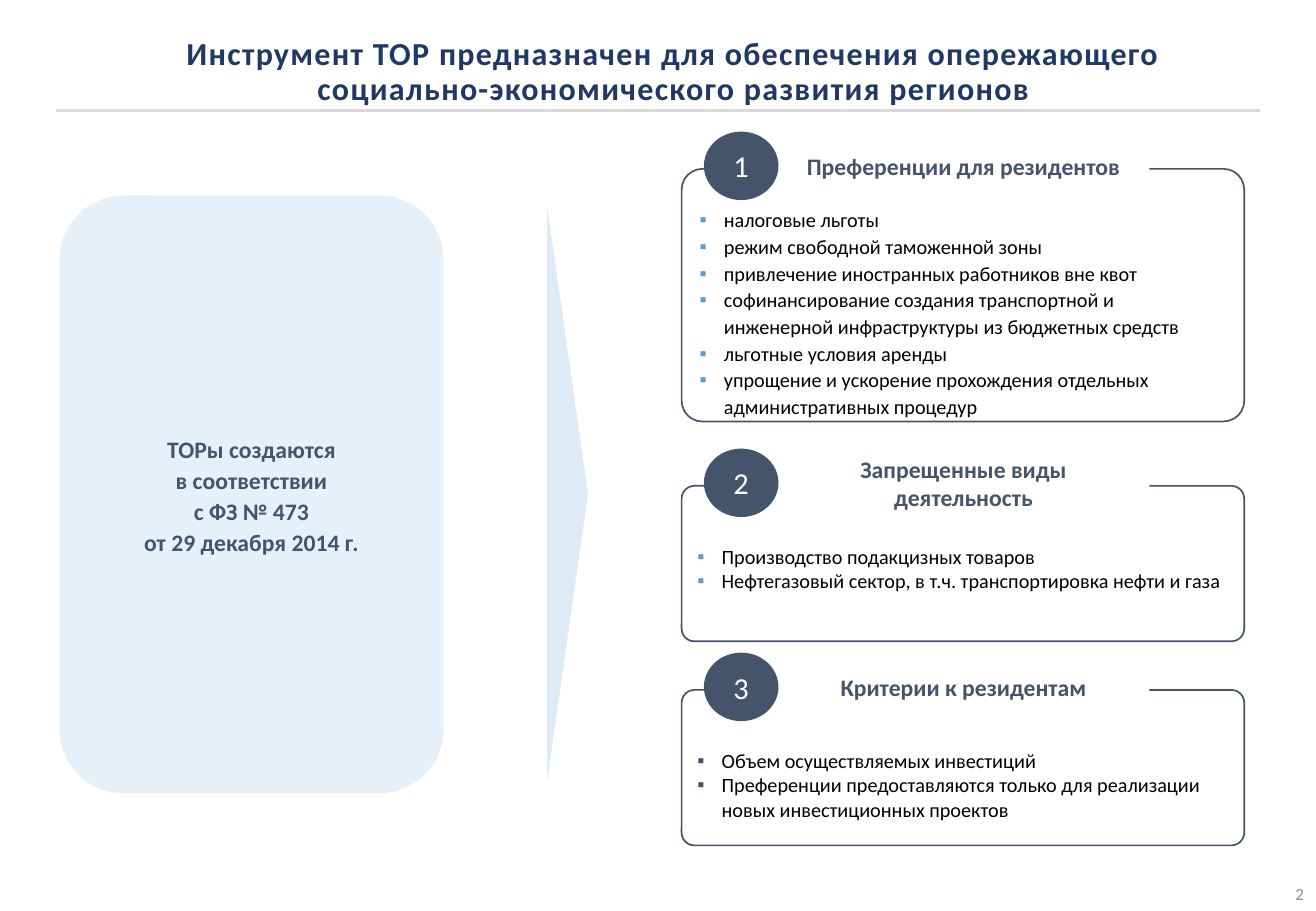
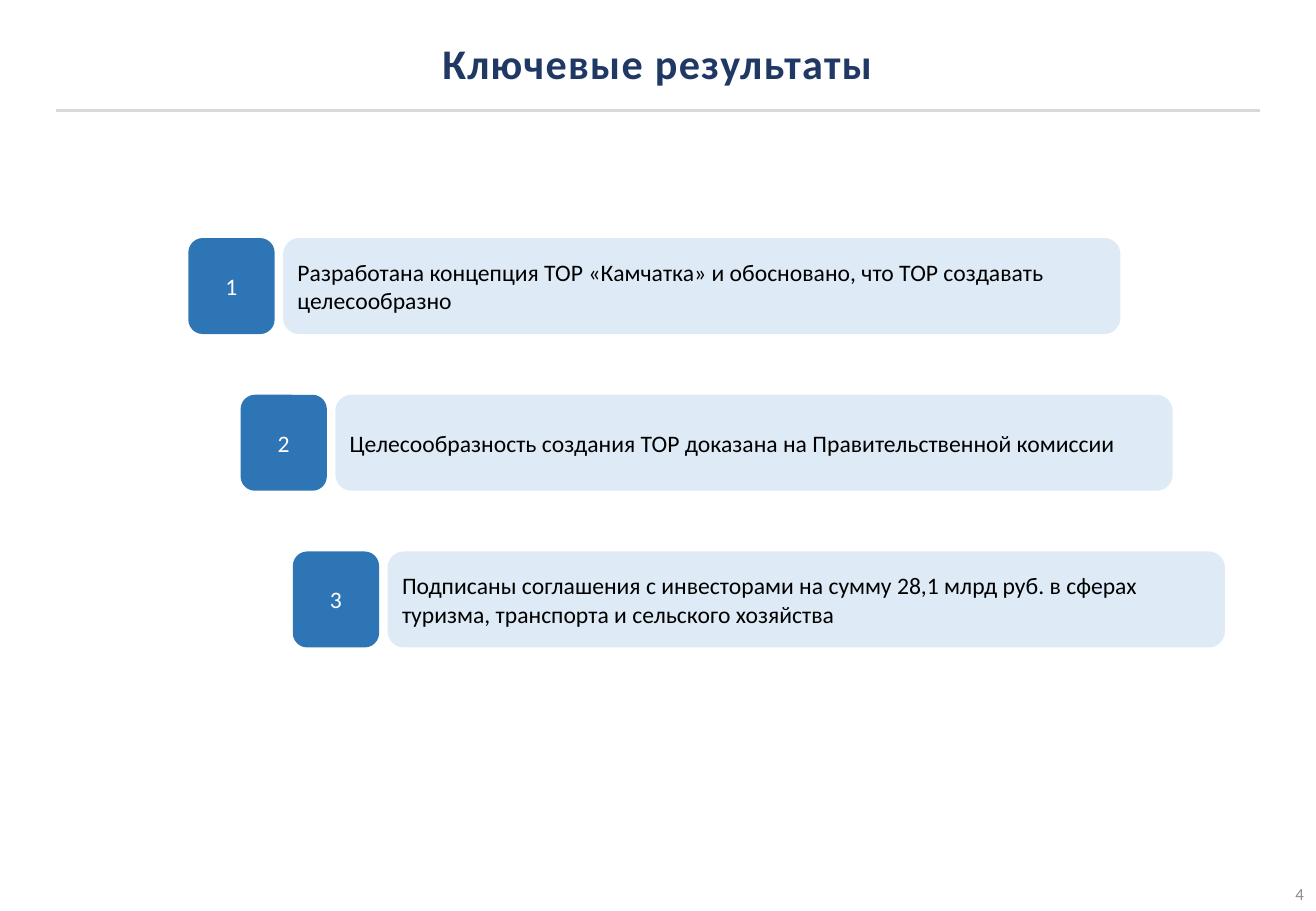
from dataclasses import dataclass
from lxml.etree import SubElement
from pptx import Presentation
from pptx.dml.color import RGBColor
from pptx.enum.shapes import MSO_CONNECTOR, MSO_SHAPE
from pptx.enum.text import MSO_ANCHOR, MSO_AUTO_SIZE, PP_ALIGN
from pptx.oxml.ns import qn
from pptx.util import Inches, Pt


@dataclass(frozen=True)
class Theme:
    font: str = "Calibri"
    navy: str = "203864"
    slate: str = "44546A"
    blue: str = "2E75B6"
    sky: str = "5B9BD5"
    pale: str = "DEEBF7"
    rule: str = "D9D9D9"
    gray: str = "8C8C8C"
    white: str = "FFFFFF"
    black: str = "000000"
    body: int = 12
    head: int = 14
    disc: int = 18
    page: int = 10


T = Theme()


def block(slide, kind, box, fill=None, line=None, width=1):
    shape = slide.shapes.add_shape(kind, *map(Inches, box))
    shape.shadow.inherit = False
    if fill:
        shape.fill.solid()
        shape.fill.fore_color.rgb = RGBColor.from_string(fill)
    else:
        shape.fill.background()
    if line:
        shape.line.color.rgb = RGBColor.from_string(line)
        shape.line.width = Pt(width)
    else:
        shape.line.fill.background()
    return shape


def write(shape, lines, size, color, bold=False, align=PP_ALIGN.CENTER,
          anchor=MSO_ANCHOR.MIDDLE, pad=(0.1, 0.05), gap=1.0, mark=None, track=None):
    frame = shape.text_frame
    frame.word_wrap = True
    frame.auto_size = MSO_AUTO_SIZE.NONE
    frame.vertical_anchor = anchor
    frame.margin_left = frame.margin_right = Inches(pad[0])
    frame.margin_top = frame.margin_bottom = Inches(pad[1])
    for i, line in enumerate(lines):
        para = frame.add_paragraph() if i else frame.paragraphs[0]
        para.alignment = align
        para.line_spacing = gap
        para.space_before = Pt(0)
        if mark:
            props = para._p.get_or_add_pPr()
            props.set("marL", str(Inches(0.2)))
            props.set("indent", str(-Inches(0.2)))
            tint = SubElement(props, qn("a:buClr"))
            SubElement(tint, qn("a:srgbClr")).set("val", mark)
            SubElement(props, qn("a:buFont")).set("typeface", "Arial")
            SubElement(props, qn("a:buChar")).set("char", "▪")
        run = para.add_run()
        run.text = line
        run.font.name = T.font
        run.font.size = Pt(size)
        run.font.bold = bold
        run.font.color.rgb = RGBColor.from_string(color)
        if track:
            run._r.get_or_add_rPr().set("spc", str(track))


deck = Presentation()
deck.slide_width = Inches(10.83)
deck.slide_height = Inches(7.5)
layout = deck.slide_layouts[5]

heads = [
    ("Инструмент ТОР предназначен для обеспечения опережающего "
     "социально-экономического развития регионов", 19, (0.78, 0.26, 9.53, 0.68), "2"),
    ("Ключевые результаты", 25, (0.46, 0.2, 9.9, 0.68), "4"),
]
slides = []
for text, size, box, page in heads:
    slide = deck.slides.add_slide(layout)
    title = slide.shapes.title
    title.left, title.top, title.width, title.height = map(Inches, box)
    write(title, [text], size, T.navy, bold=True, pad=(0.07, 0.04), gap=0.9, track=80)
    foot = slide.shapes.add_textbox(*map(Inches, (9.02, 7.22, 1.78, 0.27)))
    write(foot, [page], T.page, T.gray, align=PP_ALIGN.RIGHT, pad=(0.07, 0.04))
    slides.append(slide)
tools, gains = slides

rule = tools.shapes.add_connector(
    MSO_CONNECTOR.STRAIGHT, *map(Inches, (0.46, 0.91, 10.37, 0.91)))
rule.line.color.rgb = RGBColor.from_string(T.rule)
rule.line.width = Pt(2.25)
SubElement(rule.element.spPr, qn("a:effectLst"))
layout.shapes.element.append(rule.element)

law = block(tools, MSO_SHAPE.ROUNDED_RECTANGLE, (0.49, 1.61, 3.16, 4.92), T.pale)
tint = law.element.spPr.find(qn("a:solidFill")).find(qn("a:srgbClr"))
SubElement(tint, qn("a:alpha")).set("val", "75000")
write(law, ["ТОРы создаются", "в соответствии", "с ФЗ № 473", "от 29 декабря 2014 г."],
      T.head, T.slate, bold=True, gap=1.1)

wedge = block(tools, MSO_SHAPE.ISOSCELES_TRIANGLE, (2.21, 3.89, 4.92, 0.35),
              T.pale, T.white, 0.75)
wedge.rotation = 90

panels = [
    ("Преференции для резидентов", 1.39, 2.08, 0.25, 1.1, T.sky, [
        "налоговые льготы",
        "режим свободной таможенной зоны",
        "привлечение иностранных работников вне квот",
        "софинансирование создания транспортной и инженерной "
        "инфраструктуры из бюджетных средств",
        "льготные условия аренды",
        "упрощение и ускорение прохождения отдельных административных процедур",
    ]),
    ("Запрещенные виды деятельность", 4, 1.28, 0.45, 1.0, T.sky, [
        "Производство подакцизных товаров",
        "Нефтегазовый сектор, в т.ч. транспортировка нефти и газа",
    ]),
    ("Критерии к резидентам", 5.68, 1.28, 0.45, 1.0, T.slate, [
        "Объем осуществляемых инвестиций",
        "Преференции предоставляются только для реализации "
        "новых инвестиционных проектов",
    ]),
]
for num, (name, top, high, drop, gap, mark, items) in enumerate(panels, 1):
    panel = block(tools, MSO_SHAPE.ROUNDED_RECTANGLE, (5.61, top, 4.63, high), line=T.slate)
    panel.adjustments[0] = 0.082
    write(panel, items, T.body, T.black, align=PP_ALIGN.LEFT, anchor=MSO_ANCHOR.TOP,
          pad=(0.1, drop), gap=gap, mark=mark)
    panel.text_frame.margin_bottom = 0
    label = block(tools, MSO_SHAPE.RECTANGLE, (6.4, top - 0.3, 3.06, 0.55), T.white)
    write(label, [name], T.head, T.slate, bold=True)
    disc = block(tools, MSO_SHAPE.OVAL, (5.8, top - 0.3, 0.6, 0.55), T.slate, T.slate)
    write(disc, [str(num)], T.disc, T.white)

facts = [
    "Разработана концепция ТОР «Камчатка» и обосновано, что ТОР создавать целесообразно",
    "Целесообразность создания ТОР доказана на Правительственной комиссии",
    "Подписаны соглашения с инвесторами на сумму 28,1 млрд руб. "
    "в сферах туризма, транспорта и сельского хозяйства",
]
for i, fact in enumerate(facts):
    left, top = 1.55 + 0.43 * i, 1.96 + 1.29 * i
    badge = block(gains, MSO_SHAPE.ROUNDED_RECTANGLE, (left, top, 0.71, 0.79), T.blue)
    write(badge, [str(i + 1)], T.head, T.white, pad=(0.08, 0.08))
    card = block(gains, MSO_SHAPE.ROUNDED_RECTANGLE, (left + 0.78, top, 6.89, 0.79), T.pale)
    write(card, [fact], T.head, T.black, align=PP_ALIGN.LEFT, pad=(0.08, 0.08))

deck.save("out.pptx")
